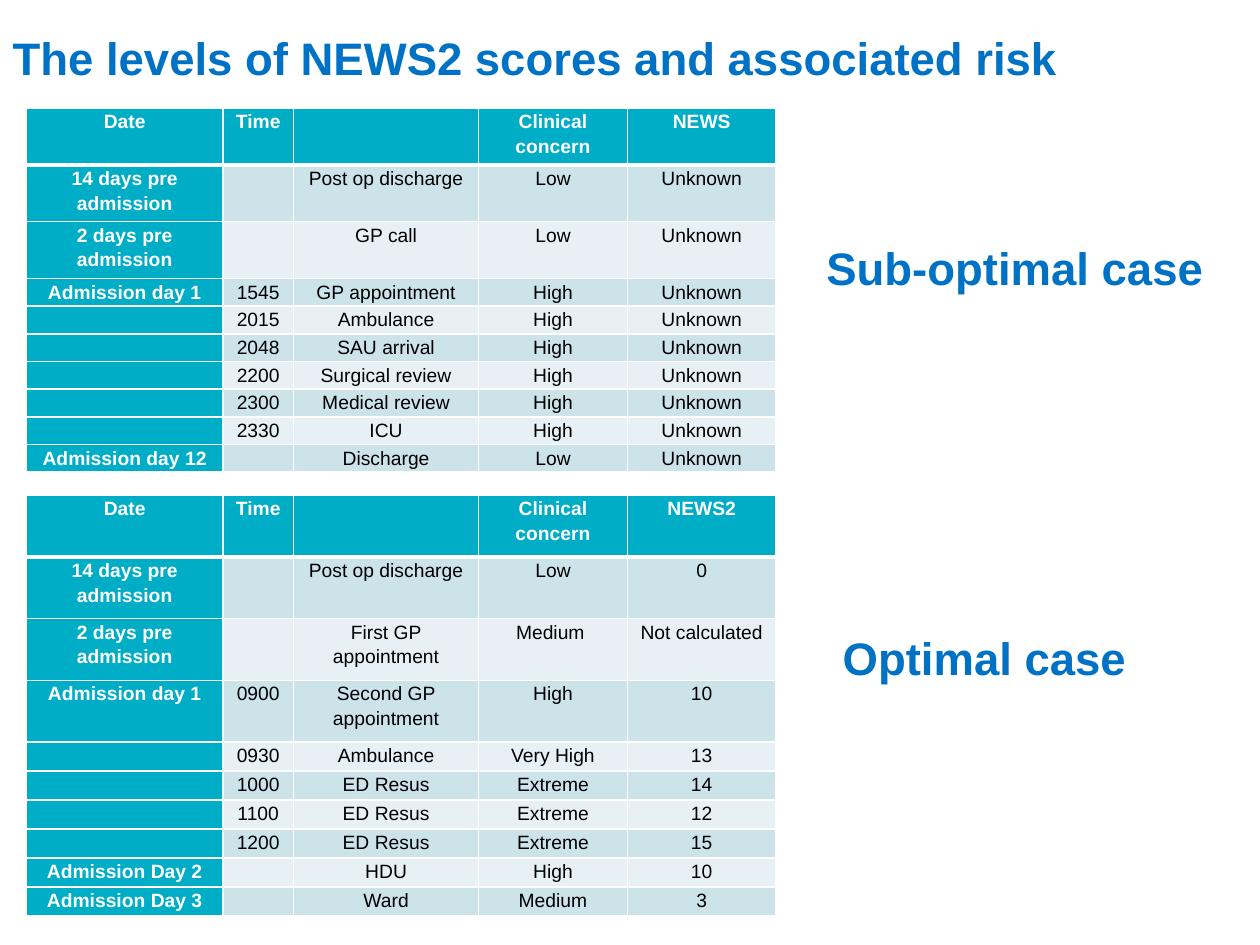
"""Build a slide comparing NEWS2 scores in a sub-optimal and an optimal case."""
from lxml.etree import SubElement
from pptx import Presentation
from pptx.dml.color import RGBColor
from pptx.enum.text import MSO_ANCHOR, MSO_AUTO_SIZE, PP_ALIGN
from pptx.oxml import parse_xml
from pptx.oxml.ns import nsdecls, qn
from pptx.util import Inches, Pt

COLORS = {"heading": "0072C6", "header": "00ADC6", "band_dark": "CCE3EA",
          "band_light": "E7F1F5", "white": "FFFFFF", "text": "000000"}
FONT = "Arial"
TITLE = "The levels of NEWS2 scores and associated risk"
COLUMN_WIDTHS = [1.56, 0.56, 1.47, 1.18, 1.18]

SUB_OPTIMAL_ROWS = [
    ("Date", "Time", "", "Clinical concern", "NEWS"),
    ("14 days pre admission", "", "Post op discharge", "Low", "Unknown"),
    ("2 days pre admission", "", "GP call", "Low", "Unknown"),
    ("Admission day 1", "1545", "GP appointment", "High", "Unknown"),
    ("", "2015", "Ambulance", "High", "Unknown"),
    ("", "2048", "SAU arrival", "High", "Unknown"),
    ("", "2200", "Surgical review", "High", "Unknown"),
    ("", "2300", "Medical review", "High", "Unknown"),
    ("", "2330", "ICU", "High", "Unknown"),
    ("Admission day 12", "", "Discharge", "Low", "Unknown"),
]
OPTIMAL_ROWS = [
    ("Date", "Time", "", "Clinical concern", "NEWS2"),
    ("14 days pre admission", "", "Post op discharge", "Low", "0"),
    ("2 days pre admission", "", "First GP appointment", "Medium ", "Not calculated"),
    ("Admission day 1", "0900", "Second GP appointment", "High", "10"),
    ("", "0930", "Ambulance", "Very High", "13"),
    ("", "1000", "ED Resus", "Extreme", "14"),
    ("", "1100", "ED Resus", "Extreme", "12"),
    ("", "1200", "ED Resus", "Extreme", "15"),
    ("Admission Day 2", "", "HDU", "High", "10"),
    ("Admission Day 3", "", "Ward", "Medium", "3"),
]
CASES = [
    {"label": "Sub-optimal case", "label_box": (6.46, 1.86, 3.34, 0.54), "top": 0.86,
     "rows": SUB_OPTIMAL_ROWS, "tall_rows": 3, "tall": 0.45, "short": 0.22},
    {"label": "Optimal case", "label_box": (6.59, 4.95, 2.94, 0.54), "top": 3.93,
     "rows": OPTIMAL_ROWS, "tall_rows": 4, "tall": 0.49, "short": 0.23},
]


def add_run(paragraph, text, size, color, bold):
    run = paragraph.add_run()
    run.text = text
    run.font.name = FONT
    run.font.size = Pt(size)
    run.font.bold = bold
    run.font.color.rgb = RGBColor.from_string(COLORS[color])


def set_borders(cell, row_index):
    widths = {"L": 1, "R": 1, "T": 3 if row_index == 1 else 1, "B": 3 if row_index == 0 else 1}
    for position, (side, width) in enumerate(widths.items()):
        border = parse_xml(
            f'<a:ln{side} {nsdecls("a")} w="{Pt(width)}"><a:solidFill>'
            f'<a:srgbClr val="{COLORS["white"]}"/></a:solidFill></a:ln{side}>')
        cell._tc.get_or_add_tcPr().insert(position, border)


def format_cell(cell, text, row_index, column_index):
    heading = row_index == 0 or column_index == 0
    band = "band_dark" if row_index % 2 else "band_light"
    cell.fill.solid()
    cell.fill.fore_color.rgb = RGBColor.from_string(COLORS["header" if heading else band])
    cell.margin_left = cell.margin_right = Inches(0.07)
    cell.margin_top = cell.margin_bottom = 0
    set_borders(cell, row_index)
    paragraph = cell.text_frame.paragraphs[0]
    paragraph.alignment = PP_ALIGN.CENTER
    paragraph.line_spacing = 1.15
    paragraph.space_after = Pt(6)
    if text:
        add_run(paragraph, text, 11, "white" if heading else "text", heading)
    else:
        SubElement(paragraph._p, qn("a:endParaRPr"), sz="1100")


def add_case_table(slide, case):
    rows = case["rows"]
    heights = [case["tall"] if index < case["tall_rows"] else case["short"]
               for index in range(len(rows))]
    table = slide.shapes.add_table(
        len(rows), len(COLUMN_WIDTHS), Inches(0.21), Inches(case["top"]),
        Inches(sum(COLUMN_WIDTHS)), Inches(sum(heights))).table
    table.horz_banding = False
    table.first_col = True
    for column, width in zip(table.columns, COLUMN_WIDTHS):
        column.width = Inches(width)
    for row_index, (texts, height) in enumerate(zip(rows, heights)):
        table.rows[row_index].height = Inches(height)
        for column_index, text in enumerate(texts):
            format_cell(table.cell(row_index, column_index), text, row_index, column_index)


def add_case_label(slide, case):
    label = slide.shapes.add_textbox(*map(Inches, case["label_box"]))
    label.text_frame.word_wrap = True
    label.text_frame.auto_size = MSO_AUTO_SIZE.SHAPE_TO_FIT_TEXT
    add_run(label.text_frame.paragraphs[0], case["label"], 26, "heading", True)


def main():
    presentation = Presentation()
    presentation.slide_width = Inches(10)
    presentation.slide_height = Inches(7.5)
    slide = presentation.slides.add_slide(presentation.slide_layouts[5])
    title = slide.shapes.title
    title.left, title.top, title.width, title.height = map(Inches, (0, 0.09, 8.63, 0.73))
    title.text_frame.vertical_anchor = MSO_ANCHOR.MIDDLE
    title_paragraph = title.text_frame.paragraphs[0]
    title_paragraph.alignment = PP_ALIGN.LEFT
    add_run(title_paragraph, TITLE, 26, "heading", True)
    for case in CASES:
        add_case_label(slide, case)
        add_case_table(slide, case)
    presentation.save("out.pptx")


if __name__ == "__main__":
    main()
